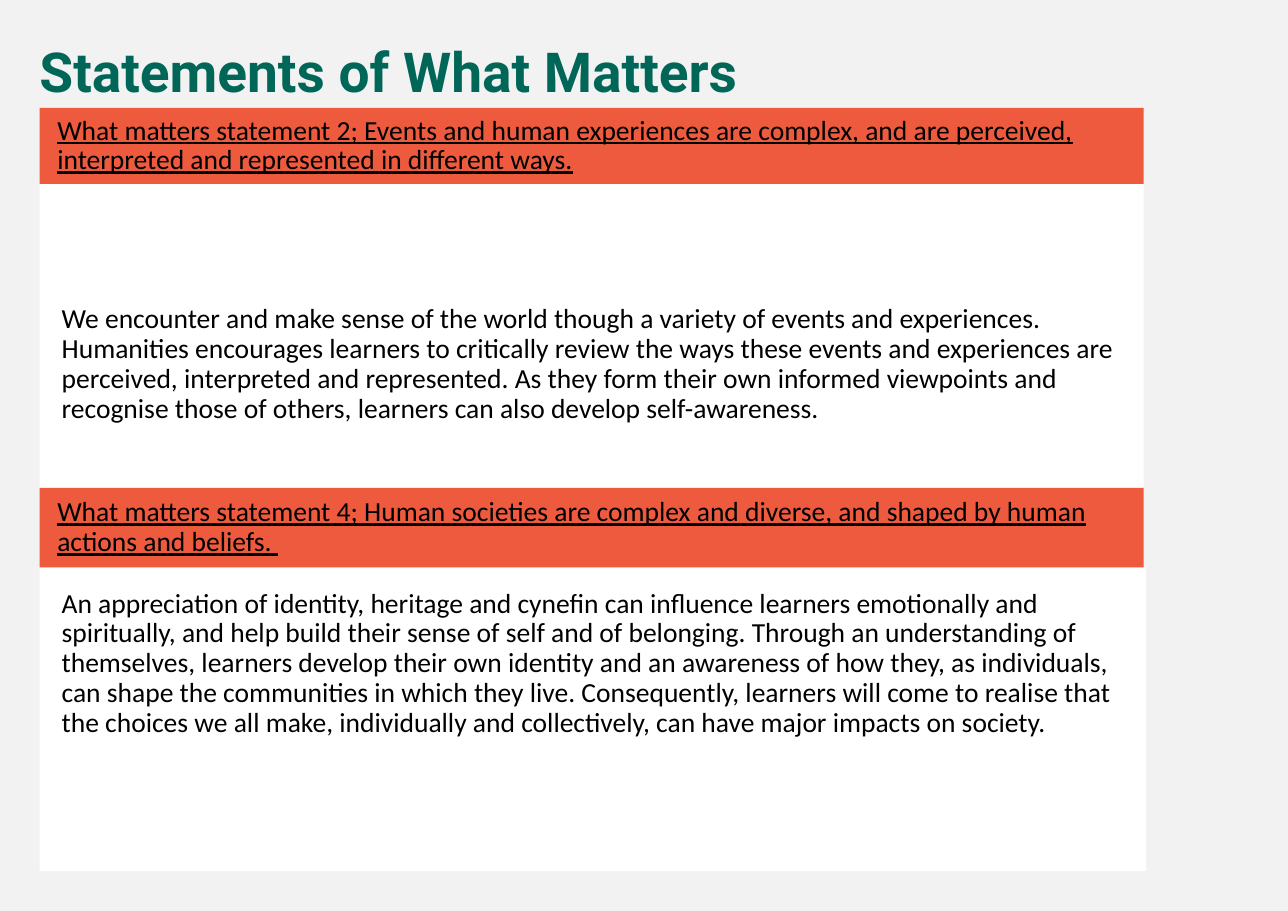
from dataclasses import dataclass

from pptx import Presentation
from pptx.dml.color import RGBColor
from pptx.enum.shapes import MSO_SHAPE
from pptx.enum.text import MSO_ANCHOR, PP_ALIGN
from pptx.util import Inches, Pt


@dataclass(frozen=True)
class Theme:
    background: str = "F2F2F2"
    panel: str = "FFFFFF"
    banner: str = "ED5A3E"
    title: str = "006758"
    text: str = "000000"
    title_font: str = "Roboto"
    body_font: str = "Calibri"
    title_size: int = 36
    body_size: int = 18


THEME = Theme()
LEFT = 0.36
BANNER_WIDTH = 10.02

# Banner top and height, panel top, width, height and text inset, then wording
STATEMENTS = [
    (
        (0.98, 0.69),
        (1.55, BANNER_WIDTH, 2.92, 1.22),
        "What matters statement 2; Events and human experiences are complex, "
        "and are perceived, interpreted and represented in different ways.",
        "We encounter and make sense of the world though a variety of events and "
        "experiences. Humanities encourages learners to critically review the ways "
        "these events and experiences are perceived, interpreted and represented. "
        "As they form their own informed viewpoints and recognise those of others, "
        "learners can also develop self-awareness.",
    ),
    (
        (4.43, 0.72),
        (5.15, 10.04, 2.76, 0.2),
        "What matters statement 4; Human societies are complex and diverse, "
        "and shaped by human actions and beliefs. ",
        "An appreciation of identity, heritage and cynefin can influence learners "
        "emotionally and spiritually, and help build their sense of self and of "
        "belonging. Through an understanding of themselves, learners develop their "
        "own identity and an awareness of how they, as individuals, can shape the "
        "communities in which they live. Consequently, learners will come to realise "
        "that the choices we all make, individually and collectively, can have major "
        "impacts on society.",
    ),
]


def write_text(frame, text, insets, anchor=MSO_ANCHOR.TOP, font_name=THEME.body_font,
               size=THEME.body_size, color=THEME.text, bold=False, underline=False):
    frame.word_wrap = True
    frame.vertical_anchor = anchor
    (frame.margin_left, frame.margin_top,
     frame.margin_right, frame.margin_bottom) = map(Inches, insets)
    frame.text = text
    paragraph = frame.paragraphs[0]
    paragraph.alignment = PP_ALIGN.LEFT
    paragraph.line_spacing = 0.9
    font = paragraph.runs[0].font
    font.name = font_name
    font.size = Pt(size)
    font.bold = bold
    font.underline = underline
    font.color.rgb = RGBColor.from_string(color)


def add_block(slide, top, width, height, fill):
    block = slide.shapes.add_shape(
        MSO_SHAPE.RECTANGLE, Inches(LEFT), Inches(top), Inches(width), Inches(height))
    block.shadow.inherit = False
    block.fill.solid()
    block.fill.fore_color.rgb = RGBColor.from_string(fill)
    block.line.fill.background()
    return block.text_frame


def add_panel(slide, top, width, height, top_inset, text):
    frame = add_block(slide, top, width, height, THEME.panel)
    write_text(frame, text, (0.2, top_inset, 0.2, 0.2))


def add_banner(slide, top, height, text):
    frame = add_block(slide, top, BANNER_WIDTH, height, THEME.banner)
    write_text(frame, text, (0.16, 0.05, 0.1, 0.05), MSO_ANCHOR.MIDDLE, underline=True)


def add_title(slide, text):
    title = slide.shapes.add_textbox(Inches(0.26), Inches(0.36), Inches(11.08), Inches(0.65))
    write_text(title.text_frame, text, (0.1, 0.05, 0.1, 0.05), font_name=THEME.title_font,
               size=THEME.title_size, color=THEME.title, bold=True)


def main():
    presentation = Presentation()
    presentation.slide_width = Inches(11.69)
    presentation.slide_height = Inches(8.27)
    slide = presentation.slides.add_slide(presentation.slide_layouts[6])
    slide.background.fill.solid()
    slide.background.fill.fore_color.rgb = RGBColor.from_string(THEME.background)

    # Statements: each banner lies over the top of its panel
    for banner, panel, heading, explanation in STATEMENTS:
        add_panel(slide, *panel, explanation)
        add_banner(slide, *banner, heading)

    # Title
    add_title(slide, "Statements of What Matters")

    presentation.save("out.pptx")


if __name__ == "__main__":
    main()
